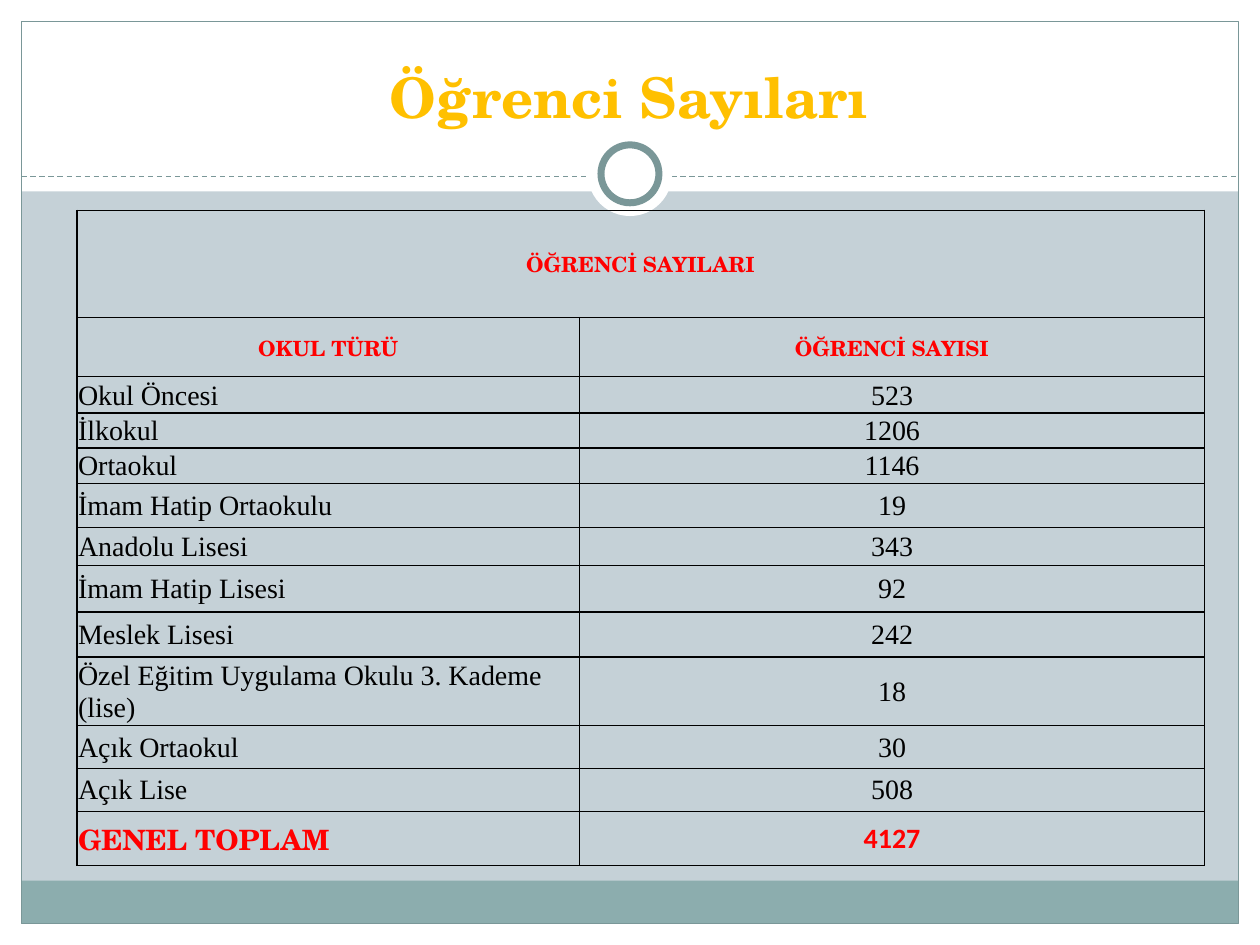
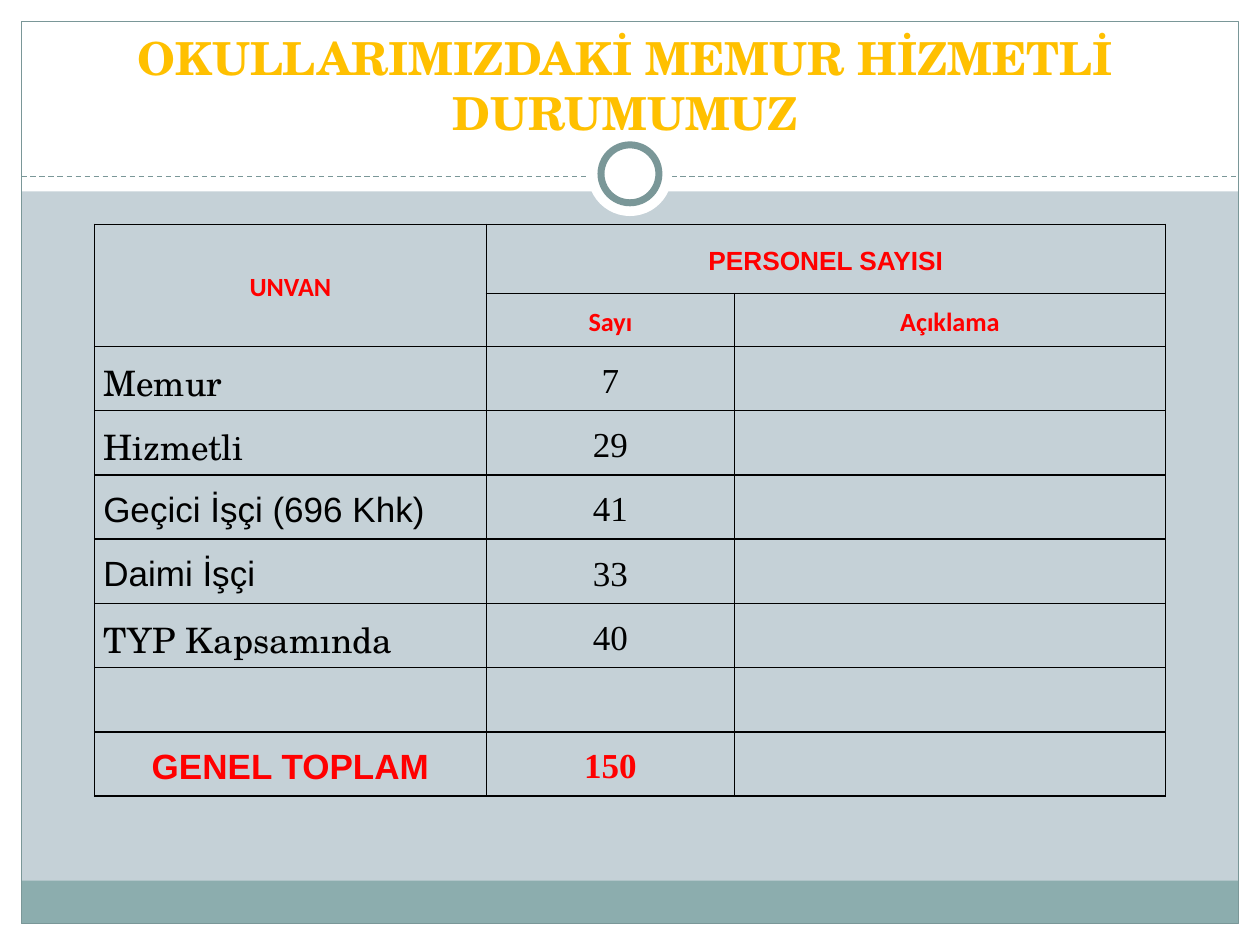
from lxml import etree
from pptx import Presentation
from pptx import util as u
from pptx.dml.color import RGBColor
from pptx.enum import dml, shapes, text
from pptx.oxml import ns

COLORS = {"bg": "C5D1D7", "white": "FFFFFF", "band": "8CADAE", "rule": "7A9798",
          "title": "FFC000", "head": "FF0000", "body": "000000"}
SERIF, TIMES, ARIAL, CALIBRI = "TeX Gyre Schola", "Times New Roman", "Arial", "Calibri"
CENTER, LEFT = text.PP_ALIGN.CENTER, text.PP_ALIGN.LEFT
MIDDLE, BOTTOM = text.MSO_ANCHOR.MIDDLE, text.MSO_ANCHOR.BOTTOM
RECT, OVAL = shapes.MSO_SHAPE.RECTANGLE, shapes.MSO_SHAPE.OVAL
SLIDE = (0, 0, 10, 7.5)


def rgb(key):
    return RGBColor.from_string(COLORS[key])


def set_all(obj, values):
    for name, value in values.items():
        setattr(obj, name, value)


def style(name, size, color="body", bold=False, align=CENTER):
    return {"font": {"name": name, "size": u.Pt(size), "bold": bold},
            "color": color, "align": align}


def write(tf, words, fmt, spacing):
    p = tf.paragraphs[0]
    set_all(p, {"alignment": fmt["align"], "line_spacing": spacing})
    r = p.add_run()
    r.text = words
    set_all(r.font, fmt["font"])
    r.font.color.rgb = rgb(fmt["color"])


def add_shape(s, kind, box, fill=None, line=None, width=0.75):
    sp = s.shapes.add_shape(kind, *map(u.Inches, box))
    sp.shadow.inherit = False
    if fill:
        sp.fill.solid()
        sp.fill.fore_color.rgb = rgb(fill)
    else:
        sp.fill.background()
    if line:
        sp.line.color.rgb = rgb(line)
        sp.line.width = u.Pt(width)
    else:
        sp.line.fill.background()


def add_dashed_rule(s, left, right, y):
    cn = s.shapes.add_connector(shapes.MSO_CONNECTOR.STRAIGHT,
                                *map(u.Inches, (left, y, right, y)))
    set_all(cn.line, {"width": u.Pt(0.75), "dash_style": dml.MSO_LINE.DASH})
    cn.line.color.rgb = rgb("rule")
    etree.SubElement(cn._element.spPr, ns.qn("a:effectLst"))


def add_frame(s, box, margin=0.17, header=1.52, footer=0.34):
    x, y, w, h = box
    s.background.fill.solid()
    s.background.fill.fore_color.rgb = rgb("bg")
    right, bottom = x + w - margin, y + h - margin
    for edge in ((x, bottom, w, margin), (x, y, w, header),
                 (x, y, margin, h), (right, y, margin, h)):
        add_shape(s, RECT, edge, "white")
    inner_w = w - 2 * margin
    add_shape(s, RECT, (x + margin, bottom - footer, inner_w, footer), "band")
    add_shape(s, RECT, (x + margin, y + margin, inner_w, h - 2 * margin), line="rule")
    add_dashed_rule(s, x + margin, right, y + 1.4)
    for size, line in ((0.67, None), (0.46, "rule")):
        ring = (x + (w - size) / 2, y + 1.38 - size / 2, size, size)
        add_shape(s, OVAL, ring, "white", line, 4)


def add_title(s, box, words, size, anchor, spacing):
    tf = s.shapes.add_textbox(*map(u.Inches, box)).text_frame
    set_all(tf, {"word_wrap": True, "vertical_anchor": anchor})
    write(tf, words, style(SERIF, size, "title", True), spacing)


def format_cell(cell, margins):
    cell.fill.background()
    left, top, right, bottom = map(u.Inches, margins)
    set_all(cell, {"vertical_anchor": MIDDLE, "margin_left": left, "margin_top": top,
                   "margin_right": right, "margin_bottom": bottom})
    props = cell._tc.get_or_add_tcPr()
    for i, side in enumerate(("lnL", "lnR", "lnT", "lnB")):
        ln = etree.Element(ns.qn(f"a:{side}"), w=str(u.Pt(1)))
        fill = etree.SubElement(ln, ns.qn("a:solidFill"))
        etree.SubElement(fill, ns.qn("a:srgbClr"), val=COLORS["body"])
        props.insert(i, ln)


def add_table(s, origin, cols, heights, rows, margins, spacing, merges):
    box = (*origin, sum(cols), sum(heights))
    table = s.shapes.add_table(len(heights), len(cols), *map(u.Inches, box)).table
    set_all(table, {"first_row": False, "horz_banding": False})
    for col, width in zip(table.columns, cols):
        col.width = u.Inches(width)
    for row, height in zip(table.rows, heights):
        row.height = u.Inches(height)
    for cell in table.iter_cells():
        format_cell(cell, margins)
    for start, end in merges:
        table.cell(*start).merge(table.cell(*end))
    for i, row in enumerate(rows):
        for j, entry in enumerate(row):
            if entry:
                write(table.cell(i, j).text_frame, *entry, spacing)


def student_slide(s, box):
    x, y = box[:2]
    add_frame(s, box)
    add_title(s, (x + 0.33, y + 0.25, 9.33, 0.83), "Öğrenci Sayıları", 32, BOTTOM, 1.15)
    head = style(SERIF, 12, "head", True)
    label, number = style(TIMES, 16, align=LEFT), style(TIMES, 16)
    counts = [("Okul Öncesi", "523"), ("İlkokul", "1206"), ("Ortaokul", "1146"),
              ("İmam Hatip Ortaokulu", "19"), ("Anadolu Lisesi", "343"),
              ("İmam Hatip Lisesi", "92"), ("Meslek Lisesi", "242"),
              ("Özel Eğitim Uygulama Okulu 3. Kademe (lise)", "18"),
              ("Açık Ortaokul", "30"), ("Açık Lise", "508")]
    rows = [[("ÖĞRENCİ SAYILARI", head)],
            [("OKUL TÜRÜ", head), ("ÖĞRENCİ SAYISI", head)],
            *[[(school, label), (count, number)] for school, count in counts],
            [("GENEL TOPLAM", style(SERIF, 16, "head", True, LEFT)),
             ("4127", style(CALIBRI, 16, "head", True))]]
    heights = [0.85, 0.47, 0.29, 0.25, 0.28, 0.35, 0.3, 0.37, 0.36, 0.5, 0.34, 0.34, 0.43]
    add_table(s, (x + 0.61, y + 1.67), [3.99, 4.96], heights, rows,
              (0.01, 0.01, 0.01, 0), 1.0, [((0, 0), (0, 1))])


def staff_slide(s, box):
    x, y = box[:2]
    add_frame(s, box)
    add_title(s, (x + 0.75, y + 0.05, 8.43, 1.25),
              "OKULLARIMIZDAKİ MEMUR HİZMETLİ DURUMUMUZ", 26, MIDDLE, 1.0)
    head = style(CALIBRI, 15, "head", True)
    staff = [("Memur", SERIF, "7"), ("Hizmetli", SERIF, "29"),
             ("Geçici İşçi (696 Khk)", ARIAL, "41"), ("Daimi İşçi", ARIAL, "33"),
             ("TYP Kapsamında", SERIF, "40")]
    rows = [[("UNVAN", head), ("PERSONEL SAYISI", style(ARIAL, 15, "head", True))],
            [None, ("Sayı", head), ("Açıklama", head)],
            *[[(role, style(font, 20, align=LEFT)), (count, style(TIMES, 20))]
              for role, font, count in staff],
            [],
            [("GENEL TOPLAM", style(ARIAL, 20, "head", True)),
             ("150", style(TIMES, 20, "head", True))]]
    add_table(s, (x + 0.75, y + 1.78), [3.11, 1.97, 3.42], [0.55, 0.42] + [0.51] * 7,
              rows, (0.07, 0, 0.07, 0), 1.15, [((0, 0), (1, 0)), ((0, 1), (0, 2))])


def main():
    prs = Presentation()
    set_all(prs, {"slide_width": u.Inches(SLIDE[2]), "slide_height": u.Inches(SLIDE[3])})
    for build in (student_slide, staff_slide):
        build(prs.slides.add_slide(prs.slide_layouts[6]), SLIDE)
    prs.save("out.pptx")


if __name__ == "__main__":
    main()
